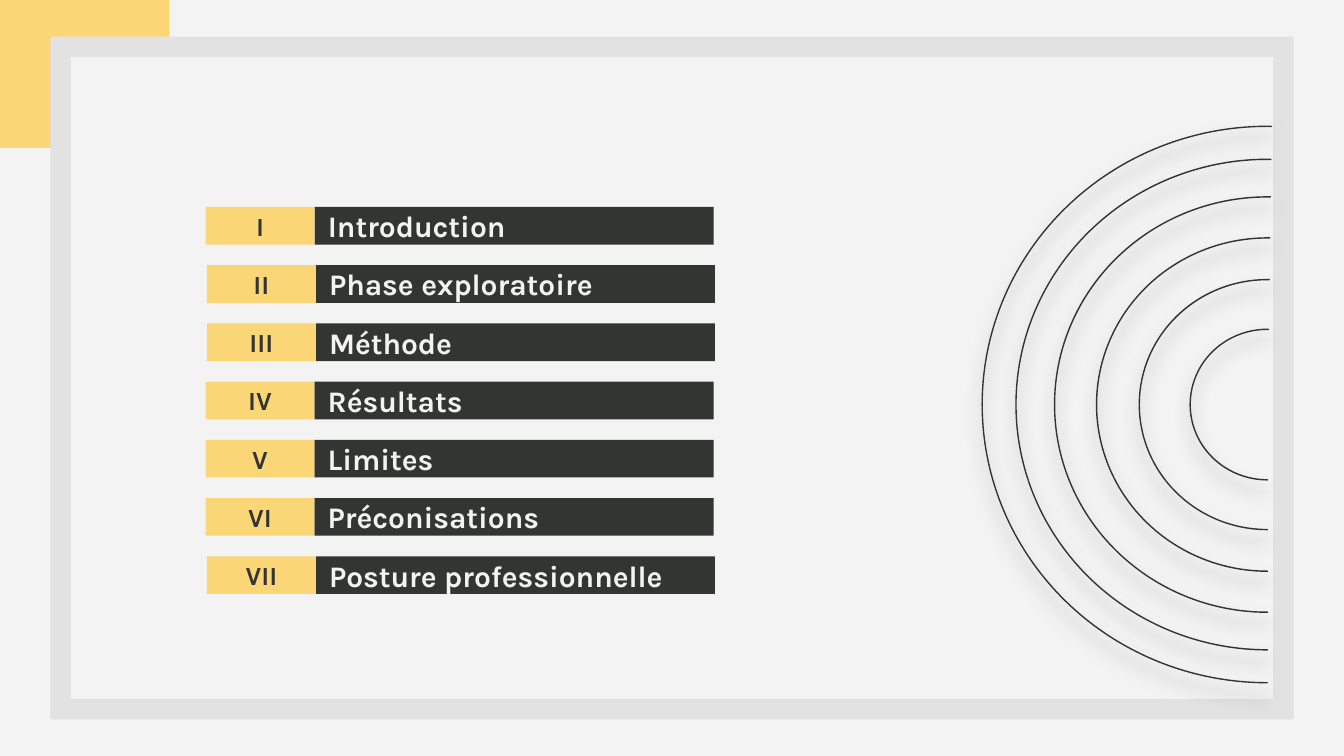
import pptx
import pptx.util
import pptx.dml.color
import pptx.enum.shapes
import pptx.enum.text
import lxml.etree

Inches = pptx.util.Inches
SHAPE = pptx.enum.shapes.MSO_SHAPE
ALIGN = pptx.enum.text.PP_ALIGN
COLORS = {"paper": "F3F3F3", "frame": "E2E2E2", "yellow": "FAD677", "ink": "333532"}
W = 10
H = W * 9 / 16


def color(name):
    return pptx.dml.color.RGBColor.from_string(COLORS[name])


def style(sp, fill, text="", size=16, ink="paper", align=ALIGN.LEFT):
    """Fill a borderless shape and write one bold line in it."""
    sp.fill.solid()
    sp.fill.fore_color.rgb = color(fill)
    sp.line.fill.background()
    if not text:
        return
    tf = sp.text_frame
    tf.auto_size = pptx.enum.text.MSO_AUTO_SIZE.NONE
    tf.word_wrap = True
    tf.vertical_anchor = pptx.enum.text.MSO_ANCHOR.MIDDLE
    tf.margin_left = tf.margin_right = tf.margin_top = tf.margin_bottom = Inches(0.1)
    p = tf.paragraphs[0]
    p.alignment = align
    r = p.add_run()
    r.text = text
    r.font.name = "Karla"
    r.font.size = pptx.util.Pt(size)
    r.font.bold = True
    r.font.color.rgb = color(ink)


prs = pptx.Presentation()
prs.slide_width, prs.slide_height = Inches(W), Inches(H)
s = prs.slides.add_slide(prs.slide_layouts[5])
s.background.fill.solid()
s.background.fill.fore_color.rgb = color("paper")

# Corner accent and frame
corner = s.shapes.add_shape(SHAPE.CORNER, Inches(0.06), Inches(-0.1), Inches(1.12), Inches(1.28))
corner.rotation = 90
corner.adjustments[0], corner.adjustments[1] = 0.413, 0.373
corner.shadow.inherit = False
style(corner, "yellow")

frame_w, frame_h = 9.25, 5.08
frame = s.shapes.add_shape(SHAPE.FRAME, Inches((W - frame_w) / 2), Inches((H - frame_h) / 2),
                           Inches(frame_w), Inches(frame_h))
frame.adjustments[0] = 0.03
frame.shadow.inherit = False
style(frame, "frame")

# Agenda: a number column and a heading column; some rows sit slightly right
chapters = [("I", "Introduction", 0), ("II", "Phase exploratoire", 0.01),
            ("III", "Méthode", 0.01), ("IV", "Résultats", 0), ("V", "Limites", 0),
            ("VI", "Préconisations", 0), ("VII", "Posture professionnelle", 0.01)]
left, top, bottom, bar_h = 1.53, 1.54, 4.42, 0.28
number_w, heading_w = 0.81, 2.97
pitch = (bottom - bar_h - top) / (len(chapters) - 1)
for row, (number, heading, shift) in enumerate(chapters):
    x, y = left + shift, top + row * pitch
    box = (Inches(x + number_w), Inches(y), Inches(heading_w), Inches(bar_h))
    if row == 0:
        sp = s.shapes.title
        sp.left, sp.top, sp.width, sp.height = box
    else:
        sp = s.shapes.add_shape(SHAPE.RECTANGLE, *box)
        sp.shadow.inherit = False
    style(sp, "ink", heading)
    sp = s.shapes.add_shape(SHAPE.RECTANGLE, Inches(x), Inches(y),
                            Inches(number_w), Inches(bar_h))
    sp.shadow.inherit = False
    style(sp, "yellow", number, 14, "ink", ALIGN.CENTER)

# Concentric half rings, turned to open to the right, with a soft shadow below
SHADOW = ('<a:effectLst xmlns:a="http://schemas.openxmlformats.org/drawingml/2006/main">'
          '<a:outerShdw blurRad="114300" dist="76200" dir="5400000" algn="t" rotWithShape="0">'
          '<a:srgbClr val="000000"><a:alpha val="50000"/></a:srgbClr>'
          '</a:outerShdw></a:effectLst>')
center_x, center_y, stretch = 9.43, 3.01, 1.025
for ring_w in (4.14, 3.65, 3.09, 2.48, 1.86, 1.12):
    ring_h = ring_w * stretch
    ring = s.shapes.add_shape(SHAPE.BLOCK_ARC, Inches(center_x - ring_w / 2),
                              Inches(center_y - ring_h / 2), Inches(ring_w), Inches(ring_h))
    ring.rotation = 270
    for i, value in enumerate((108, 0.504, 0)):
        ring.adjustments[i] = value
    style(ring, "yellow")
    ring.line.color.rgb = color("ink")
    ring.line.width = pptx.util.Pt(0.75)
    ring.element.spPr.append(lxml.etree.fromstring(SHADOW))

prs.save("out.pptx")
